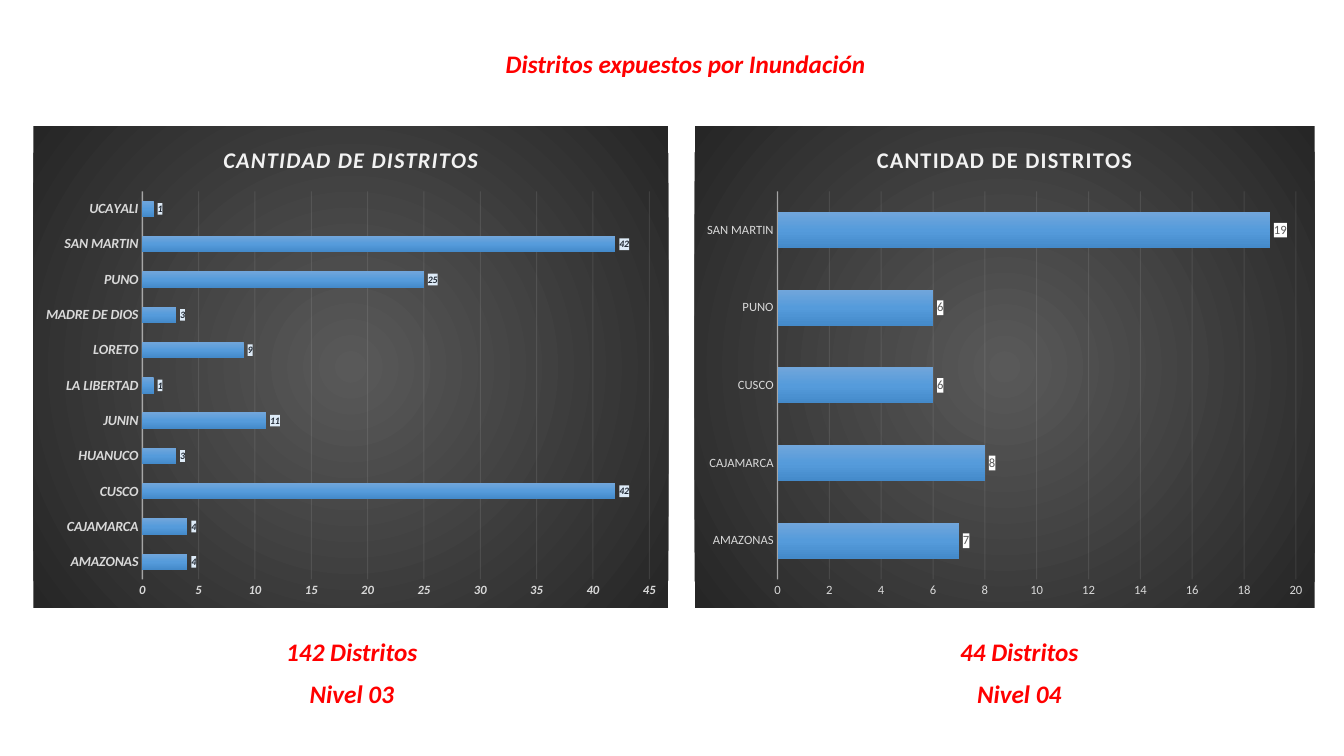
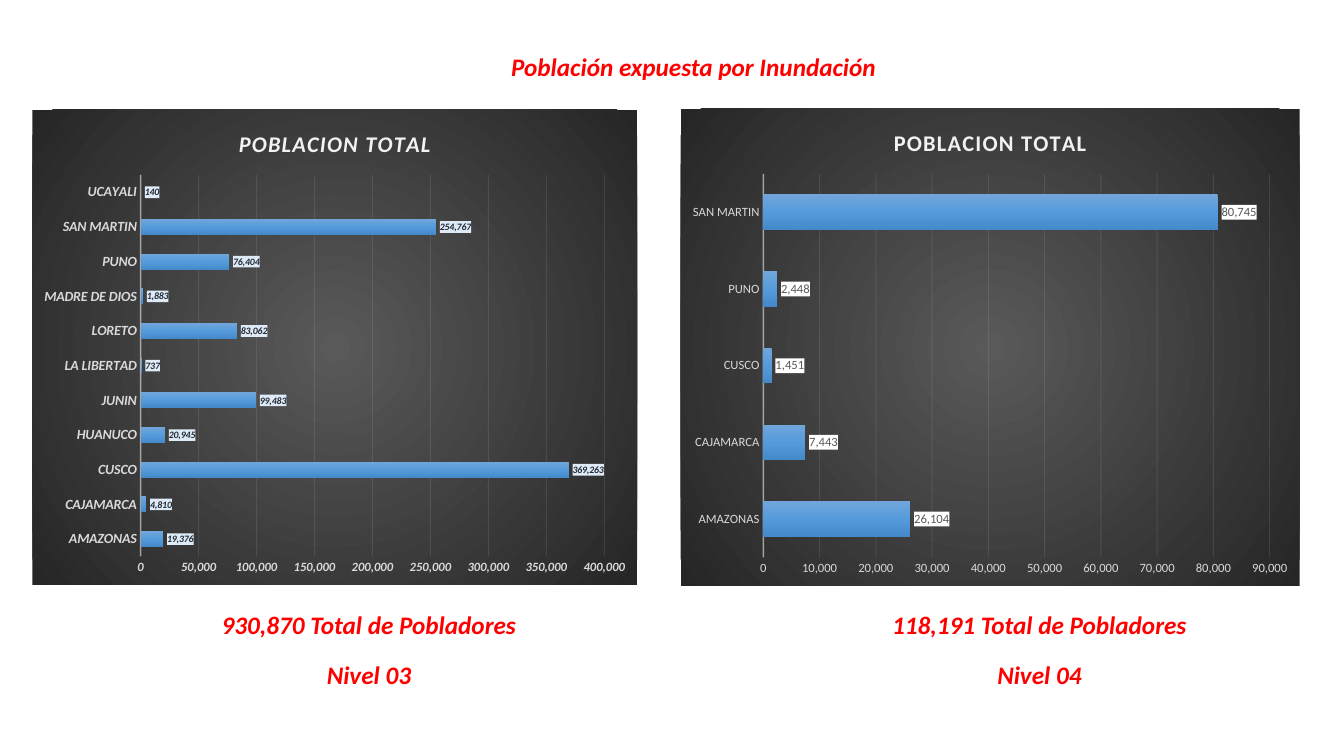
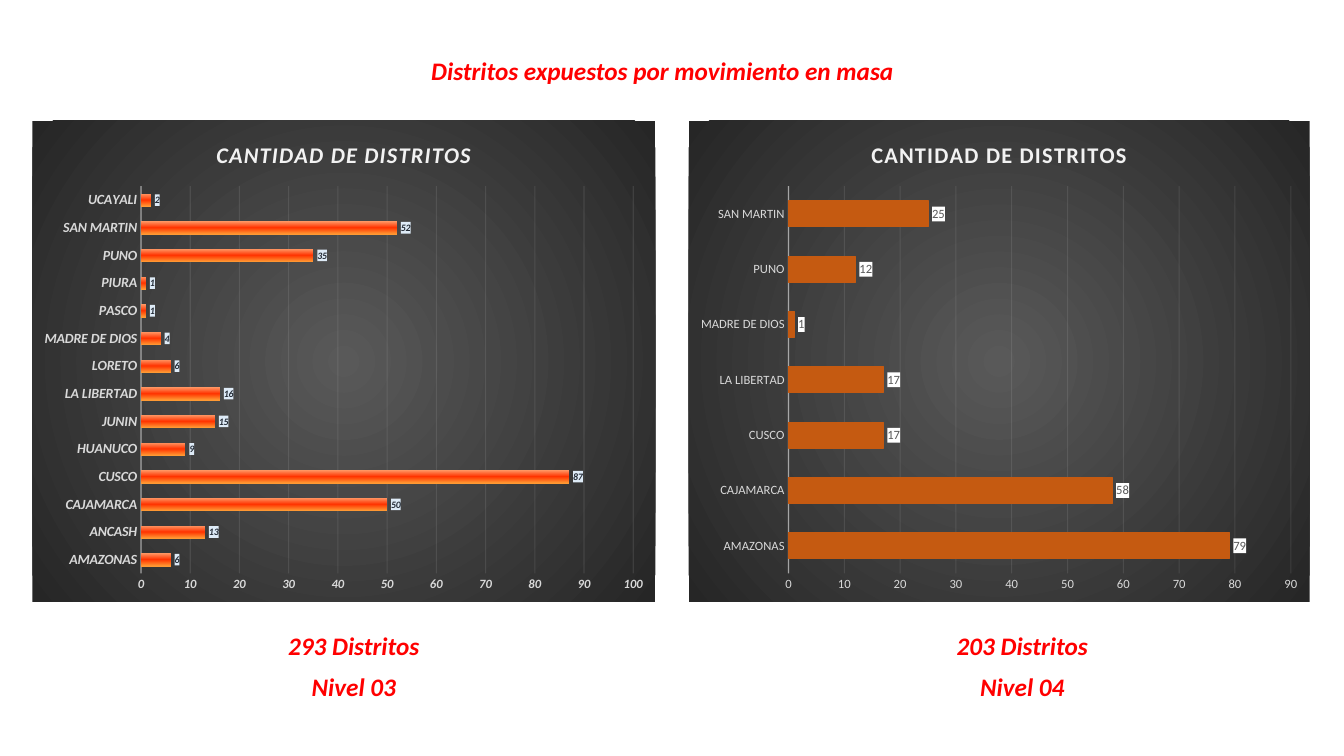
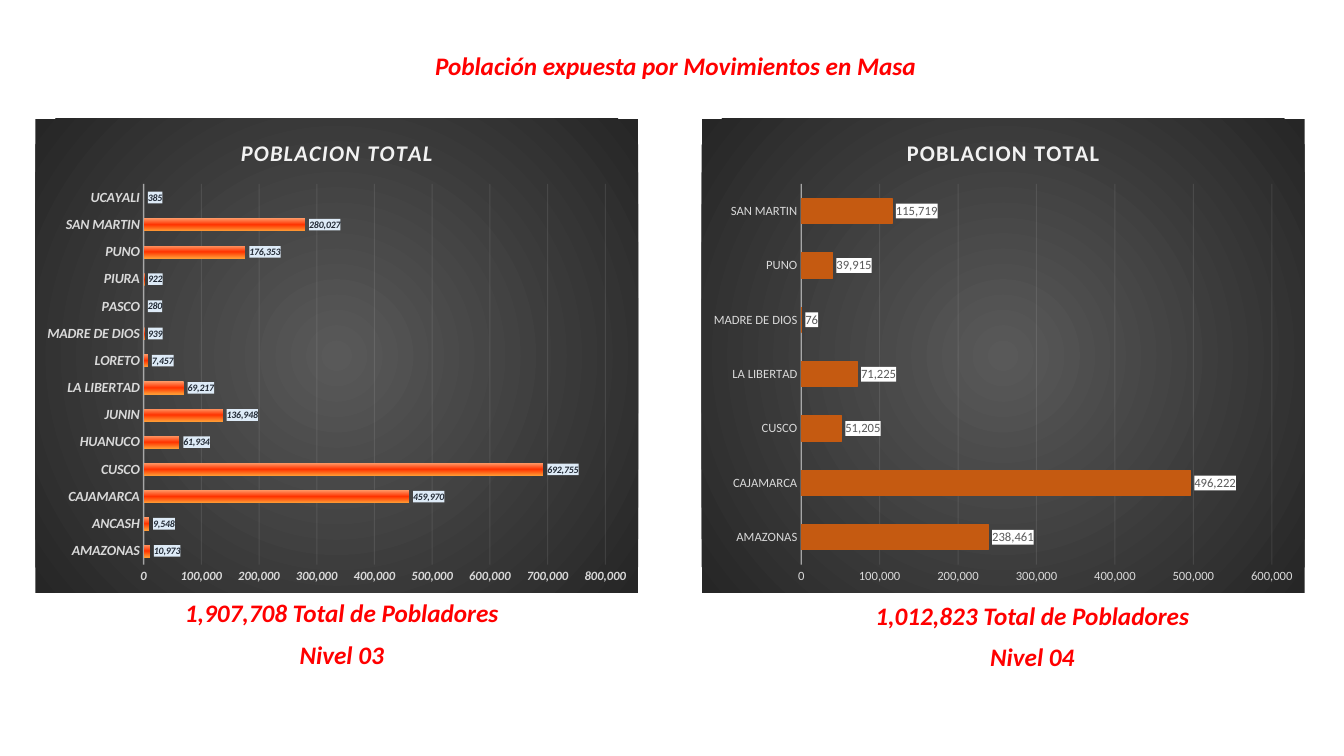
from lxml import etree
from pptx import Presentation
from pptx.chart.data import CategoryChartData
from pptx.dml.color import RGBColor
from pptx.enum.chart import XL_CHART_TYPE, XL_LABEL_POSITION, XL_TICK_MARK
from pptx.enum.text import MSO_ANCHOR, PP_ALIGN
from pptx.oxml import parse_xml
from pptx.oxml.ns import nsdecls, qn
from pptx.util import Inches, Pt

FONT = "Calibri"
RED = RGBColor(0xFF, 0x00, 0x00)
BLACK = RGBColor(0x00, 0x00, 0x00)
WHITE = RGBColor(0xFF, 0xFF, 0xFF)
PALE_BLUE = RGBColor(0xDE, 0xEB, 0xF7)
NAVY = RGBColor(0x22, 0x2A, 0x35)
OFF_WHITE = RGBColor(0xF2, 0xF2, 0xF2)
LIGHT_GREY = RGBColor(0xD9, 0xD9, 0xD9)
MID_GREY = RGBColor(0x59, 0x59, 0x59)
DARK_GREY = RGBColor(0x26, 0x26, 0x26)
RUST = RGBColor(0xC5, 0x5A, 0x11)
BLUES = [RGBColor(0x71, 0xA6, 0xDB), RGBColor(0x55, 0x9B, 0xDB), RGBColor(0x44, 0x8A, 0xCA)]
FLAMES = [RGBColor(0xFF, 0x99, 0x66), RGBColor(0xFF, 0x33, 0x00), RGBColor(0xFF, 0x99, 0x33)]

FLOOD_3 = ["AMAZONAS", "CAJAMARCA", "CUSCO", "HUANUCO", "JUNIN", "LA LIBERTAD", "LORETO",
           "MADRE DE DIOS", "PUNO", "SAN MARTIN", "UCAYALI"]
FLOOD_4 = ["AMAZONAS", "CAJAMARCA", "CUSCO", "PUNO", "SAN MARTIN"]
MASS_3 = ["AMAZONAS", "ANCASH", "CAJAMARCA", "CUSCO", "HUANUCO", "JUNIN", "LA LIBERTAD", "LORETO",
          "MADRE DE DIOS", "PASCO", "PIURA", "PUNO", "SAN MARTIN", "UCAYALI"]
MASS_4 = ["AMAZONAS", "CAJAMARCA", "CUSCO", "LA LIBERTAD", "MADRE DE DIOS", "PUNO", "SAN MARTIN"]

LEVELS = [
    dict(name="Nivel 03", strong=True, region_size=10, label_size=7, label_color=NAVY, label_fill=PALE_BLUE),
    dict(name="Nivel 04", strong=False, region_size=9, label_size=9, label_color=MID_GREY, label_fill=WHITE),
]

SLIDES = [
    dict(title="Distritos expuestos por Inundación", title_spot=(6.8, 0.43), measure="CANTIDAD DE DISTRITOS",
         panels=[
             dict(regions=FLOOD_3, values=[4, 4, 42, 3, 11, 1, 9, 3, 25, 42, 1], bars=BLUES,
                  box=(0.33, 1.25, 6.3, 4.78), total="142 Distritos", caption=(3.49, 6.26, 6.68)),
             dict(regions=FLOOD_4, values=[7, 8, 6, 6, 19], bars=BLUES,
                  box=(6.89, 1.25, 6.15, 4.78), total="44 Distritos", caption=(10.11, 6.26, 6.68)),
         ]),
    dict(title="Población expuesta por Inundación", title_spot=(6.88, 0.46), measure="POBLACION TOTAL",
         panels=[
             dict(regions=FLOOD_3, bars=BLUES,
                  values=[19376, 4810, 369263, 20945, 99483, 737, 83062, 1883, 76404, 254767, 140],
                  box=(0.32, 1.09, 6, 4.71), total="930,870 Total de Pobladores", caption=(3.66, 6, 6.49)),
             dict(regions=FLOOD_4, values=[26104, 7443, 1451, 2448, 80745], bars=BLUES,
                  box=(6.75, 1.08, 6.14, 4.73), total="118,191 Total de Pobladores",
                  caption=(10.31, 6, 6.49)),
         ]),
    dict(title="Distritos expuestos por movimiento en masa", title_spot=(6.57, 0.5),
         measure="CANTIDAD DE DISTRITOS",
         panels=[
             dict(regions=MASS_3, values=[6, 13, 50, 87, 9, 15, 16, 6, 4, 1, 1, 35, 52, 2], bars=FLAMES,
                  box=(0.32, 1.2, 6.18, 4.77), total="293 Distritos", caption=(3.51, 6.2, 6.61)),
             dict(regions=MASS_4, values=[79, 58, 17, 17, 1, 12, 25], bars=[RUST],
                  box=(6.83, 1.2, 6.16, 4.77), total="203 Distritos", caption=(10.14, 6.2, 6.61)),
         ]),
    dict(title="Población expuesta por Movimientos en Masa", title_spot=(6.7, 0.45), measure="POBLACION TOTAL",
         panels=[
             dict(regions=MASS_3, bars=FLAMES,
                  values=[10973, 9548, 459970, 692755, 61934, 136948, 69217, 7457, 939, 280, 922,
                          176353, 280027, 385],
                  box=(0.35, 1.18, 5.98, 4.7), total="1,907,708 Total de Pobladores",
                  caption=(3.39, 5.88, 6.29)),
             dict(regions=MASS_4, values=[238461, 496222, 51205, 71225, 76, 39915, 115719], bars=[RUST],
                  box=(6.96, 1.18, 5.98, 4.7), total="1,012,823 Total de Pobladores",
                  caption=(10.24, 5.91, 6.31)),
         ]),
]

TITLE_WIDTH, CAPTION_WIDTH, LINE_HEIGHT = 6, 3.6, 0.4
RADIAL = '<a:path path="circle"><a:fillToRect l="50000" t="50000" r="50000" b="50000"/></a:path>'
VERTICAL = '<a:lin ang="5400000" scaled="0"/>'


def style_font(font, size, color, bold=False, italic=False):
    font.name, font.size, font.bold, font.italic = FONT, Pt(size), bold, italic
    font.color.rgb = color


def write_line(shape, text, center, top, width):
    shape.left, shape.top = Inches(center - width / 2), Inches(top)
    shape.width, shape.height = Inches(width), Inches(LINE_HEIGHT)
    frame = shape.text_frame
    frame.word_wrap = True
    frame.vertical_anchor = MSO_ANCHOR.TOP
    paragraph = frame.paragraphs[0]
    paragraph.alignment = PP_ALIGN.CENTER
    run = paragraph.add_run()
    run.text = text
    style_font(run.font, 18, RED, bold=True, italic=True)


def gradient(colors, direction):
    step = 100000 // (len(colors) - 1)
    stops = "".join(f'<a:gs pos="{i * step}"><a:srgbClr val="{color}"/></a:gs>'
                    for i, color in enumerate(colors))
    return (f'<a:gradFill {nsdecls("a")} rotWithShape="1"><a:gsLst>{stops}</a:gsLst>'
            f'{direction}</a:gradFill>')


def area(fill):
    return parse_xml(f'<c:spPr {nsdecls("c", "a")}>{fill}<a:ln><a:noFill/></a:ln></c:spPr>')


def find(chart, *tags):
    return chart.element.find(".//" + "/".join(qn(tag) for tag in tags))


def draw_line(chart, line, width, percent, owner):
    line.width = Pt(width)
    line.color.rgb = OFF_WHITE
    color = find(chart, owner, "c:spPr", "a:ln", "a:solidFill", "a:srgbClr")
    etree.SubElement(color, qn("a:alpha")).set("val", str(percent * 1000))


def style_axes(chart, level):
    strong = level["strong"]
    regions, amounts = chart.category_axis, chart.value_axis
    for axis, size in ((regions, level["region_size"]), (amounts, 9)):
        axis.major_tick_mark = axis.minor_tick_mark = XL_TICK_MARK.NONE
        style_font(axis.tick_labels.font, size, LIGHT_GREY, strong, strong)
    regions.has_major_gridlines = False
    draw_line(chart, regions.format.line, 1, 54, "c:catAx")
    amounts.tick_labels.number_format = "#,##0"
    amounts.tick_labels.number_format_is_linked = False
    amounts.format.line.fill.background()
    draw_line(chart, amounts.major_gridlines.format.line, 0.75, 10, "c:majorGridlines")


def style_bars(chart, bars, level):
    plot = chart.plots[0]
    plot.gap_width, plot.overlap, plot.vary_by_categories = 115, -20, False
    series = plot.series[0]
    if len(bars) == 1:
        series.format.fill.solid()
        series.format.fill.fore_color.rgb = bars[0]
        series.format.line.color.rgb = bars[0]
        series.format.line.width = Pt(0.75)
    else:
        series.format.fill.background()
        empty = find(chart, "c:ser", "c:spPr", "a:noFill")
        empty.getparent().replace(empty, parse_xml(gradient(bars, VERTICAL)))
    labels = series.data_labels
    labels.show_value = True
    labels.position = XL_LABEL_POSITION.OUTSIDE_END
    labels.number_format, labels.number_format_is_linked = "#,##0", False
    style_font(labels.font, level["label_size"], level["label_color"], level["strong"], level["strong"])
    fill = f'<a:solidFill><a:srgbClr val="{level["label_fill"]}"/></a:solidFill>'
    find(chart, "c:ser", "c:dLbls", "c:txPr").addprevious(area(fill))


def add_bar_chart(slide, measure, panel, level):
    data = CategoryChartData(number_format="#,##0")
    data.categories = panel["regions"]
    data.add_series(measure, panel["values"])
    box = [Inches(length) for length in panel["box"]]
    chart = slide.shapes.add_chart(XL_CHART_TYPE.BAR_CLUSTERED, *box, data).chart
    style_font(chart.font, 10, BLACK)
    chart.has_legend = False
    chart.has_title = True
    heading = chart.chart_title.text_frame.paragraphs[0].add_run()
    heading.text = measure
    style_font(heading.font, 16, OFF_WHITE, True, level["strong"])
    find(chart, "c:title", "c:tx", "c:rich", "a:p", "a:r", "a:rPr").set("spc", "100")
    chart.chart_title.include_in_layout = False
    style_axes(chart, level)
    style_bars(chart, panel["bars"], level)
    find(chart, "c:chart").addnext(area(gradient([MID_GREY, DARK_GREY], RADIAL)))


def main():
    deck = Presentation()
    deck.slide_width, deck.slide_height = Inches(13.33), Inches(7.5)
    for content in SLIDES:
        slide = deck.slides.add_slide(deck.slide_layouts[5])
        write_line(slide.shapes.title, content["title"], *content["title_spot"], TITLE_WIDTH)
        for panel, level in zip(content["panels"], LEVELS):
            add_bar_chart(slide, content["measure"], panel, level)
            center, total_top, level_top = panel["caption"]
            for text, top in ((panel["total"], total_top), (level["name"], level_top)):
                caption = slide.shapes.add_textbox(0, 0, 0, 0)
                write_line(caption, text, center, top, CAPTION_WIDTH)
    deck.save("out.pptx")


if __name__ == "__main__":
    main()
